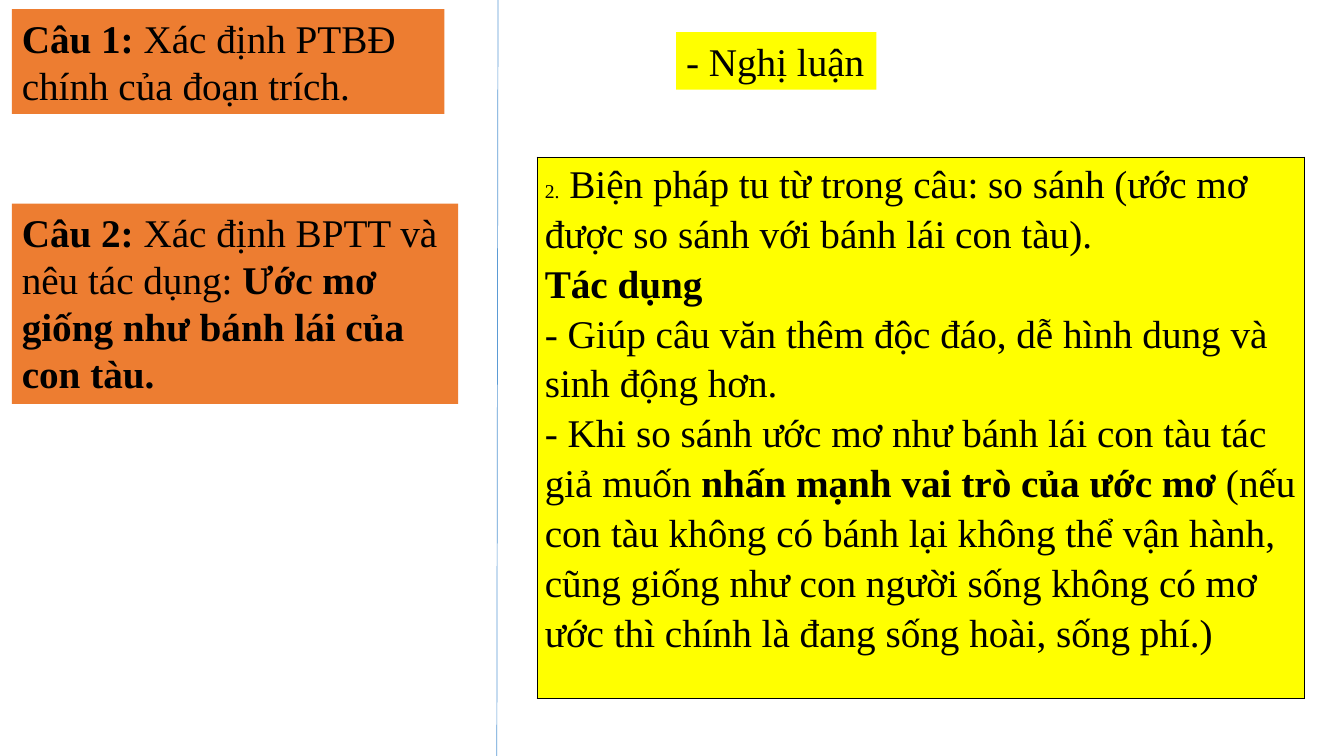
import pptx
import pptx.dml.color
import pptx.enum.shapes
import pptx.enum.text
import pptx.oxml
import pptx.oxml.ns
import pptx.util
from pptx.util import Cm

BLACK = pptx.dml.color.RGBColor(0x00, 0x00, 0x00)
ORANGE = pptx.dml.color.RGBColor(0xED, 0x7D, 0x31)
YELLOW = pptx.dml.color.RGBColor(0xFF, 0xFF, 0x00)
BLUE = pptx.dml.color.RGBColor(0x5B, 0x9B, 0xD5)
FONT = "Times New Roman"
SIZE, SMALL = 28, 14
NORMAL, BOLD = False, True

BOXES = [
    ((0.3, 0.23, 10.9, 2.64), ORANGE, True, [
        ("Câu 1:", BOLD, SIZE),
        (" Xác định PTBĐ chính của đoạn trích.", NORMAL, SIZE),
    ]),
    ((0.3, 5.13, 11.25, 5.05), ORANGE, True, [
        ("Câu 2:", BOLD, SIZE),
        (" Xác định BPTT và nêu tác dụng: ", NORMAL, SIZE),
        ("Ước mơ giống như bánh lái của con tàu.", BOLD, SIZE),
    ]),
    ((17.04, 0.81, 5.05, 1.45), YELLOW, False, [
        ("- Nghị luận", NORMAL, SIZE),
    ]),
]

ANSWER_AT = (13.54, 3.96, 19.33, 13.64)
ANSWER = [
    [("2.", NORMAL, SMALL),
     (" Biện pháp tu từ trong câu: so sánh (ước mơ được so sánh với bánh lái con tàu).",
      NORMAL, SIZE)],
    [("Tác dụng", BOLD, SIZE)],
    [("- Giúp câu văn thêm độc đáo, dễ hình dung và sinh động hơn.", NORMAL, SIZE)],
    [("- Khi so sánh ước mơ như bánh lái con tàu tác giả muốn ", NORMAL, SIZE),
     ("nhấn mạnh vai trò của ước mơ", BOLD, SIZE),
     (" (nếu con tàu không có bánh lại không thể vận hành, cũng giống như con người "
      "sống không có mơ ước thì chính là đang sống hoài, sống phí.)", NORMAL, SIZE)],
]


def add_runs(p, runs):
    for text, bold, size in runs:
        r = p.add_run()
        r.text = text
        r.font.name = FONT
        r.font.size = pptx.util.Pt(size)
        r.font.bold = bold
        r.font.color.rgb = BLACK


def add_divider(slide):
    line = slide.shapes.add_connector(
        pptx.enum.shapes.MSO_CONNECTOR.STRAIGHT, Cm(12.55), Cm(0), Cm(12.52), Cm(19.05))
    line.line.color.rgb = BLUE
    line.line.width = pptx.util.Pt(0.5)
    pptx.oxml.ns.qn("a:effectLst")
    line._element.spPr.append(pptx.oxml.parse_xml(
        f'<a:effectLst {pptx.oxml.ns.nsdecls("a")}/>'))


def add_box(slide, at, fill, wrap, runs):
    sp = slide.shapes.add_shape(
        pptx.enum.shapes.MSO_SHAPE.RECTANGLE, *map(Cm, at))
    sp.shadow.inherit = False
    sp.fill.solid()
    sp.fill.fore_color.rgb = fill
    sp.line.fill.background()
    tf = sp.text_frame
    tf.word_wrap = wrap
    tf.auto_size = pptx.enum.text.MSO_AUTO_SIZE.SHAPE_TO_FIT_TEXT
    tf.vertical_anchor = pptx.enum.text.MSO_ANCHOR.TOP
    p = tf.paragraphs[0]
    p.alignment = pptx.enum.text.PP_ALIGN.LEFT
    add_runs(p, runs)


def add_borders(cell):
    tcPr = cell._tc.get_or_add_tcPr()
    for i, side in enumerate(("lnL", "lnR", "lnT", "lnB")):
        tcPr.insert(i, pptx.oxml.parse_xml(
            f'<a:{side} {pptx.oxml.ns.nsdecls("a")} w="12700"><a:solidFill>'
            f'<a:srgbClr val="{BLACK}"/></a:solidFill></a:{side}>'))


def add_answer(slide):
    table = slide.shapes.add_table(1, 1, *map(Cm, ANSWER_AT)).table
    table.first_row = table.horz_banding = False
    cell = table.cell(0, 0)
    cell.fill.solid()
    cell.fill.fore_color.rgb = YELLOW
    cell.margin_left = cell.margin_right = Cm(0.19)
    cell.margin_top = cell.margin_bottom = Cm(0)
    add_borders(cell)
    tf = cell.text_frame
    for i, runs in enumerate(ANSWER):
        p = tf.add_paragraph() if i else tf.paragraphs[0]
        p.line_spacing = 1.15
        add_runs(p, runs)


def main():
    prs = pptx.Presentation()
    prs.slide_width, prs.slide_height = Cm(33.87), Cm(19.05)
    slide = prs.slides.add_slide(prs.slide_layouts[6])
    add_divider(slide)
    for box in BOXES:
        add_box(slide, *box)
    add_answer(slide)
    prs.save("out.pptx")


if __name__ == "__main__":
    main()
